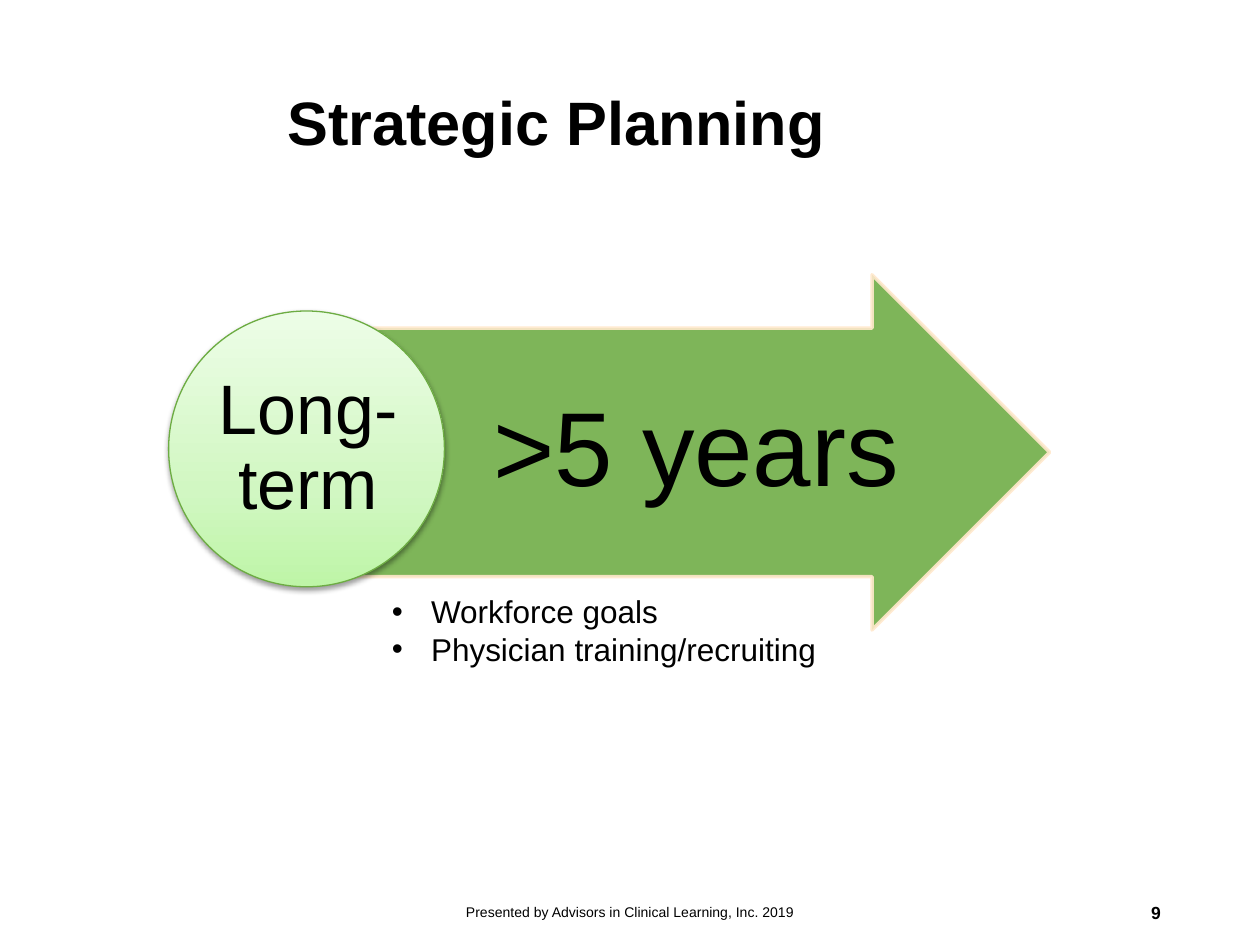
import dataclasses

import lxml.etree
import pptx
import pptx.dml.color
import pptx.enum.shapes
import pptx.enum.text
import pptx.oxml
import pptx.oxml.ns
import pptx.util

Cm = pptx.util.Cm
Pt = pptx.util.Pt
qn = pptx.oxml.ns.qn
Align = pptx.enum.text.PP_ALIGN
Anchor = pptx.enum.text.MSO_ANCHOR
AutoSize = pptx.enum.text.MSO_AUTO_SIZE
ShapeType = pptx.enum.shapes.MSO_SHAPE


@dataclasses.dataclass(frozen=True)
class Theme:
    font: str = "Arial"
    text: str = "000000"
    arrow_fill: str = "70AD47"
    arrow_line: str = "FFE8CC"
    circle_line: str = "6DAC43"
    circle_stops: tuple = ((0, "BEF5A7"), (35, "D1F7C2"), (100, "EDFDE7"))
    opacity: int = 90
    title_size: int = 35
    period_size: int = 60
    term_size: int = 40
    bullet_size: int = 18
    number_size: int = 10
    footer_size: int = 8


class SlideBuilder:
    """Holds the theme and the slide being filled."""

    def __init__(self, slide, theme):
        self.slide = slide
        self.theme = theme

    def color(self, value):
        return pptx.dml.color.RGBColor.from_string(value)

    def set_opacity(self, fill_element):
        color = fill_element.find(".//" + qn("a:srgbClr"))
        alpha = lxml.etree.SubElement(color, qn("a:alpha"))
        alpha.set("val", str(self.theme.opacity * 1000))

    def fill_frame(self, frame, lines, size, bold=False, align=Align.LEFT,
                   anchor=Anchor.MIDDLE, insets=(0.25, 0.13, 0.25, 0.13),
                   spacing=None, bullet_indent=None):
        frame.word_wrap = True
        frame.vertical_anchor = anchor
        (frame.margin_left, frame.margin_top,
         frame.margin_right, frame.margin_bottom) = map(Cm, insets)
        for index, line in enumerate(lines):
            paragraph = frame.add_paragraph() if index else frame.paragraphs[0]
            if bullet_indent:
                self.add_bullet(paragraph, bullet_indent)
            paragraph.alignment = align
            if spacing:
                paragraph.line_spacing = spacing
            run = paragraph.add_run()
            run.text = line
            run.font.name = self.theme.font
            run.font.size = Pt(size)
            run.font.bold = bold
            run.font.color.rgb = self.color(self.theme.text)

    def add_bullet(self, paragraph, indent):
        properties = paragraph._p.get_or_add_pPr()
        properties.set("marL", str(Cm(indent)))
        properties.set("indent", str(-Cm(indent)))
        font = lxml.etree.SubElement(properties, qn("a:buFont"))
        font.set("typeface", self.theme.font)
        lxml.etree.SubElement(properties, qn("a:buChar")).set("char", "•")

    def title(self, text, box):
        title = self.slide.shapes.title
        title.left, title.top, title.width, title.height = map(Cm, box)
        title.text_frame.auto_size = AutoSize.NONE
        self.fill_frame(title.text_frame, [text], self.theme.title_size,
                        bold=True, spacing=0.9)

    def text(self, lines, box, size, auto_size=AutoSize.NONE, **options):
        frame = self.slide.shapes.add_textbox(*map(Cm, box)).text_frame
        self.fill_frame(frame, lines, size, **options)
        frame.auto_size = auto_size

    def shape(self, kind, box, line_color, line_width):
        shape = self.slide.shapes.add_shape(kind, *map(Cm, box))
        shape.shadow.inherit = False
        shape.line.color.rgb = self.color(line_color)
        shape.line.width = Pt(line_width)
        return shape

    def arrow(self, box):
        arrow = self.shape(ShapeType.RIGHT_ARROW, box, self.theme.arrow_line, 2)
        arrow.adjustments[0] = 0.7
        arrow.adjustments[1] = 0.5
        arrow.fill.solid()
        arrow.fill.fore_color.rgb = self.color(self.theme.arrow_fill)
        properties = arrow._element.spPr
        self.set_opacity(properties.find(qn("a:solidFill")))
        self.set_opacity(properties.find(qn("a:ln")))

    def circle(self, box):
        circle = self.shape(ShapeType.OVAL, box, self.theme.circle_line, 0.75)
        circle.fill.gradient()
        circle.fill.gradient_angle = 90
        properties = circle._element.spPr
        stops = properties.find(".//" + qn("a:gsLst"))
        for stop in list(stops):
            stops.remove(stop)
        for position, value in self.theme.circle_stops:
            stop = lxml.etree.SubElement(stops, qn("a:gs"))
            stop.set("pos", str(position * 1000))
            lxml.etree.SubElement(stop, qn("a:srgbClr")).set("val", value)
        # Soft shadow below the circle
        shadow = lxml.etree.SubElement(properties.find(qn("a:effectLst")), qn("a:outerShdw"))
        for name, value in (("blurRad", Pt(3.1)), ("dist", Pt(1.6)), ("dir", 90 * 60000)):
            shadow.set(name, str(int(value)))
        shadow.set("rotWithShape", "0")
        color = lxml.etree.SubElement(shadow, qn("a:srgbClr"))
        color.set("val", "000000")
        lxml.etree.SubElement(color, qn("a:alpha")).set("val", "38000")


def main():
    presentation = pptx.Presentation()
    presentation.slide_width = Cm(25.4)
    presentation.slide_height = Cm(19.05)
    theme = Theme()
    slide = presentation.slides.add_slide(presentation.slide_layouts[5])
    builder = SlideBuilder(slide, theme)

    builder.title("Strategic Planning", (5.54, 0.69, 18.14, 3.68))

    # Time span arrow
    builder.arrow((5.16, 5.54, 16, 7.16))
    builder.text([">5 years"], (9.17, 6.6, 9.5, 5.03), theme.period_size,
                 align=Align.CENTER, insets=(0.43, 0.1, 0.2, 0.1), spacing=0.9)

    # Planning horizon circle
    builder.circle((3.4, 6.27, 5.56, 5.56))
    builder.text(["Long-term"], (4.24, 7.09, 3.94, 3.94), theme.term_size,
                 align=Align.CENTER, insets=(0.08,) * 4, spacing=0.9)

    # Goals
    builder.text(["Workforce goals", "Physician training/recruiting"],
                 (7.65, 11.81, 10.62, 1.8), theme.bullet_size, anchor=Anchor.TOP,
                 auto_size=AutoSize.SHAPE_TO_FIT_TEXT, bullet_indent=0.79)

    # Footer and slide number
    builder.text(["Presented by Advisors in Clinical Learning, Inc. 2019"],
                 (8.41, 17.88, 8.59, 1.02), theme.footer_size, align=Align.CENTER)
    builder.text(["9"], (17.93, 17.88, 5.72, 1.02), theme.number_size,
                 bold=True, align=Align.RIGHT)

    presentation.save("out.pptx")


if __name__ == "__main__":
    main()
